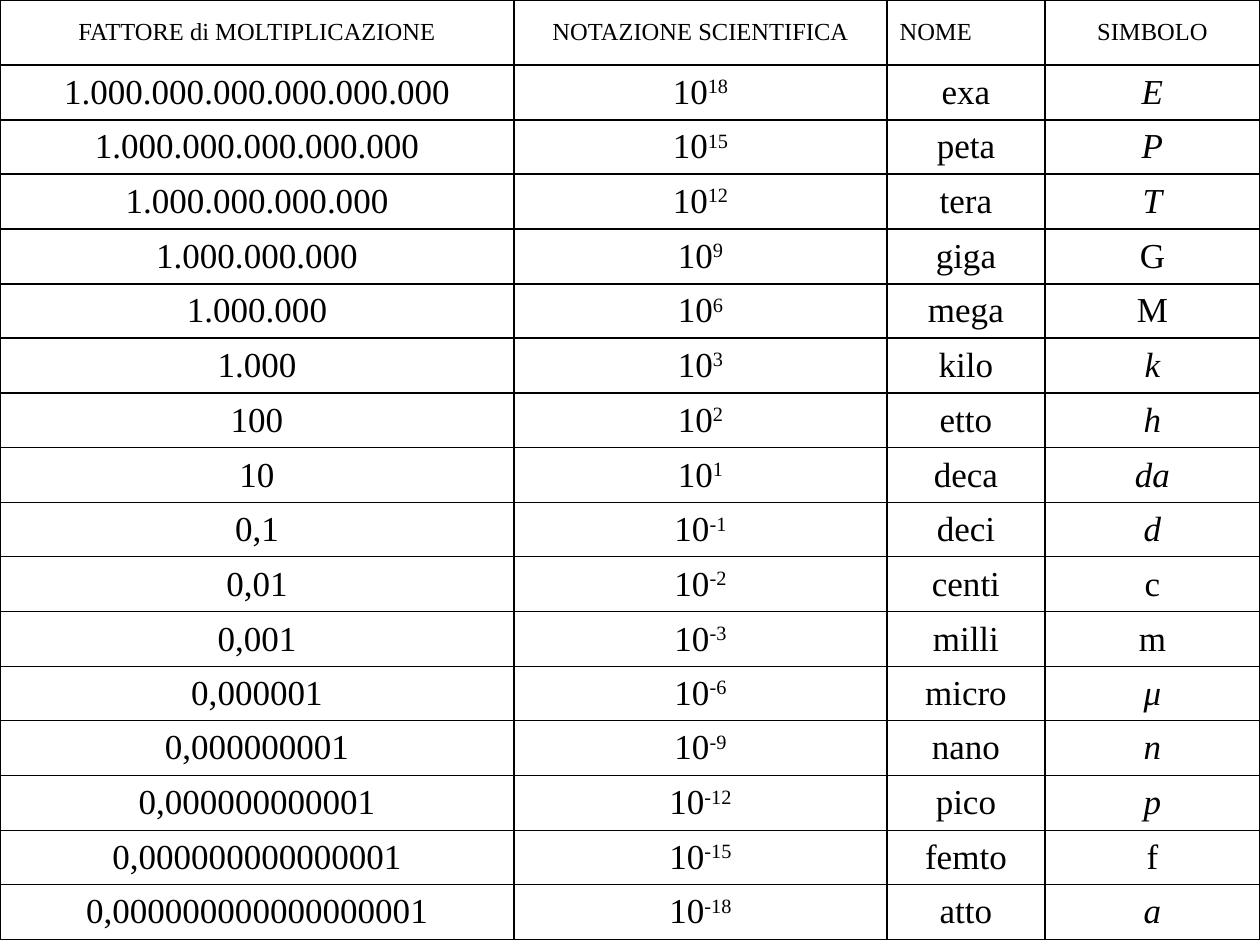
from dataclasses import dataclass

from lxml.etree import SubElement
from pptx import Presentation
from pptx.dml.color import RGBColor
from pptx.enum.text import MSO_ANCHOR, PP_ALIGN
from pptx.oxml.ns import qn
from pptx.util import Emu, Pt


@dataclass(frozen=True)
class Theme:
    font: str = "Times New Roman"
    ink: str = "000000"
    header_size: int = 14
    body_size: int = 20
    border: int = 1


THEME = Theme()
PX = 914400 // 126

# Table layout in px
COL_WIDTHS = [514, 373, 158, 215]
HEADER_HEIGHT = 65
TABLE_HEIGHT = 940

HEADERS = ["FATTORE di MOLTIPLICAZIONE", "NOTAZIONE SCIENTIFICA", "NOME", "SIMBOLO"]

# Exponent, name, symbol
PREFIXES = [
    (18, "exa", "E"), (15, "peta", "P"), (12, "tera", "T"), (9, "giga", "G"),
    (6, "mega", "M"), (3, "kilo", "k"), (2, "etto", "h"), (1, "deca", "da"),
    (-1, "deci", "d"), (-2, "centi", "c"), (-3, "milli", "m"), (-6, "micro", "μ"),
    (-9, "nano", "n"), (-12, "pico", "p"), (-15, "femto", "f"), (-18, "atto", "a"),
]
UPRIGHT_SYMBOLS = {"G", "M", "c", "m", "f"}


def px(n):
    return Emu(n * PX)


def factor(exponent):
    """Write a power of ten in Italian decimal notation."""
    if exponent > 0:
        return f"{10 ** exponent:,}".replace(",", ".")
    return "0," + "1".zfill(-exponent)


def set_borders(cell):
    tc_pr = cell._tc.get_or_add_tcPr()
    for side in ("a:lnL", "a:lnR", "a:lnT", "a:lnB"):
        ln = SubElement(tc_pr, qn(side), w=str(Pt(THEME.border)))
        fill = SubElement(ln, qn("a:solidFill"))
        SubElement(fill, qn("a:srgbClr"), val=THEME.ink)


def fill_cell(cell, text, size, italic=False, superscript=None, align=PP_ALIGN.CENTER):
    set_borders(cell)
    cell.fill.background()
    cell.vertical_anchor = MSO_ANCHOR.MIDDLE
    p = cell.text_frame.paragraphs[0]
    p.alignment = align
    p.font.name = THEME.font
    p.font.size = Pt(size)
    p.font.italic = italic
    p.font.bold = False
    p.font.color.rgb = RGBColor.from_string(THEME.ink)
    p.add_run().text = text
    if superscript is not None:
        r = p.add_run()
        r.text = superscript
        r._r.get_or_add_rPr().set("baseline", "30000")


def add_grid(s):
    count = len(PREFIXES)
    table = s.shapes.add_table(count + 1, len(HEADERS), 0, 0,
                               px(sum(COL_WIDTHS)), px(TABLE_HEIGHT)).table
    table.first_row = False
    table.horz_banding = False
    for column, width in zip(table.columns, COL_WIDTHS):
        column.width = px(width)

    # Body rows share what the header leaves
    body = TABLE_HEIGHT - HEADER_HEIGHT
    edges = [0] + [HEADER_HEIGHT + round(body * i / count) for i in range(count + 1)]
    for row, top, bottom in zip(table.rows, edges, edges[1:]):
        row.height = px(bottom - top)
    return table


def fill_header(table):
    for col, text in enumerate(HEADERS):
        align = PP_ALIGN.LEFT if text == "NOME" else PP_ALIGN.CENTER
        fill_cell(table.cell(0, col), text, THEME.header_size, align=align)


def fill_prefix_row(table, row, exponent, name, symbol):
    size = THEME.body_size
    fill_cell(table.cell(row, 0), factor(exponent), size)
    fill_cell(table.cell(row, 1), "10", size, superscript=str(exponent))
    fill_cell(table.cell(row, 2), name, size)
    fill_cell(table.cell(row, 3), symbol, size, italic=symbol not in UPRIGHT_SYMBOLS)


def main():
    prs = Presentation()
    prs.slide_width, prs.slide_height = px(1260), px(945)
    s = prs.slides.add_slide(prs.slide_layouts[6])  # blank layout

    # Table of unit prefixes
    table = add_grid(s)
    fill_header(table)
    for row, prefix in enumerate(PREFIXES, start=1):
        fill_prefix_row(table, row, *prefix)

    prs.save("out.pptx")


if __name__ == "__main__":
    main()
